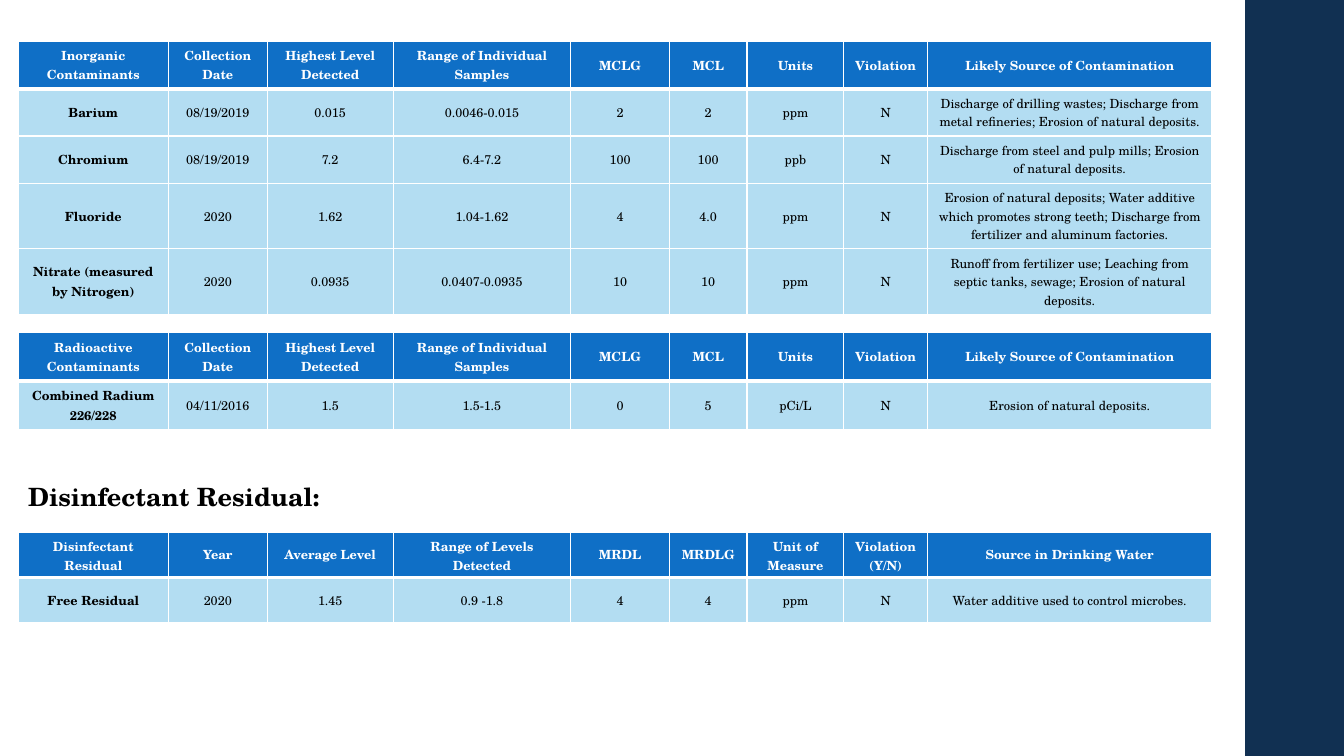
from dataclasses import dataclass

from lxml.etree import SubElement
from pptx import Presentation
from pptx.dml.color import RGBColor
from pptx.enum.shapes import MSO_SHAPE
from pptx.enum.text import MSO_ANCHOR, MSO_AUTO_SIZE, PP_ALIGN
from pptx.oxml.ns import qn
from pptx.util import Inches, Pt


@dataclass(frozen=True)
class Theme:
    font: str = "TeX Gyre Schola"
    side_bar: str = "113052"
    header_fill: str = "0F6FC6"
    body_fill: str = "B3DDF2"
    light: str = "FFFFFF"
    dark: str = "000000"
    table_size: int = 9
    heading_size: int = 18
    thin: int = 1
    thick: int = 3


THEME = Theme()
HEADING = "Disinfectant Residual:"
CONTAMINANT_COLUMNS = (
    "Collection Date", "Highest Level Detected", "Range of Individual Samples",
    "MCLG", "MCL", "Units", "Violation", "Likely Source of Contamination",
)
INORGANIC = [
    ("Inorganic Contaminants", *CONTAMINANT_COLUMNS),
    ("Barium", "08/19/2019", "0.015", "0.0046-0.015", "2", "2", "ppm", "N",
     "Discharge of drilling wastes; Discharge from metal refineries; Erosion of natural deposits."),
    ("Chromium", "08/19/2019", "7.2", "6.4-7.2", "100", "100", "ppb", "N",
     "Discharge from steel and pulp mills; Erosion of natural deposits."),
    ("Fluoride", "2020", "1.62", "1.04-1.62", "4", "4.0", "ppm", "N",
     "Erosion of natural deposits; Water additive which promotes strong teeth; "
     "Discharge from fertilizer and aluminum factories."),
    ("Nitrate (measured by Nitrogen)", "2020", "0.0935", "0.0407-0.0935", "10", "10", "ppm", "N",
     "Runoff from fertilizer use; Leaching from septic tanks, sewage; Erosion of natural deposits."),
]
RADIOACTIVE = [
    ("Radioactive Contaminants", *CONTAMINANT_COLUMNS),
    ("Combined Radium 226/228", "04/11/2016", "1.5", "1.5-1.5", "0", "5", "pCi/L", "N",
     "Erosion of natural deposits."),
]
DISINFECTANT = [
    ("Disinfectant Residual", "Year", "Average Level", "Range of Levels Detected",
     "MRDL", "MRDLG", "Unit of Measure", "Violation (Y/N)", "Source in Drinking Water"),
    ("Free Residual", "2020", "1.45", "0.9 -1.8", "4", "4", "ppm", "N",
     "Water additive used to control microbes."),
]
TABLES = [
    {"rows": INORGANIC, "top": 0.41, "heights": (0.47, 0.47, 0.47, 0.65, 0.65)},
    {"rows": RADIOACTIVE, "top": 3.3, "heights": (0.48, 0.48)},
    {"rows": DISINFECTANT, "top": 5.28, "heights": (0.45, 0.45)},
]
COLUMN_WIDTHS = (1.49, 0.98, 1.25, 1.76, 0.98, 0.77, 0.96, 0.83, 2.82)
CELL_PADDING = 0.04
LEFT = 0.18


def set_attributes(target, values):
    for name, value in values.items():
        setattr(target, name, value)


def style_text(paragraph, text, size, color, bold):
    run = paragraph.add_run()
    run.text = text
    set_attributes(run.font, {"name": THEME.font, "size": Pt(size), "bold": bold})
    run.font.color.rgb = RGBColor.from_string(color)


def set_borders(cell, top, bottom):
    properties = cell._tc.get_or_add_tcPr()
    widths = {"lnL": THEME.thin, "lnR": THEME.thin, "lnT": top, "lnB": bottom}
    for tag, width in widths.items():
        line = SubElement(properties, qn(f"a:{tag}"), w=str(Pt(width)))
        fill = SubElement(line, qn("a:solidFill"))
        SubElement(fill, qn("a:srgbClr"), val=THEME.light)


def add_data_table(slide, rows, top, heights):
    frame = slide.shapes.add_table(
        len(rows), len(COLUMN_WIDTHS), Inches(LEFT), Inches(top),
        Inches(sum(COLUMN_WIDTHS)), Inches(sum(heights)))
    table = frame.table
    table.horz_banding = False
    for column, width in zip(table.columns, COLUMN_WIDTHS):
        column.width = Inches(width)
    for row_index, (row, height) in enumerate(zip(rows, heights)):
        header = row_index == 0
        table.rows[row_index].height = Inches(height)
        for column_index, text in enumerate(row):
            cell = table.cell(row_index, column_index)
            set_borders(cell,
                        top=THEME.thick if row_index == 1 else THEME.thin,
                        bottom=THEME.thick if header else THEME.thin)
            set_attributes(cell, {
                "vertical_anchor": MSO_ANCHOR.MIDDLE,
                "margin_top": Inches(CELL_PADDING),
                "margin_bottom": Inches(CELL_PADDING),
            })
            cell.fill.solid()
            cell.fill.fore_color.rgb = RGBColor.from_string(
                THEME.header_fill if header else THEME.body_fill)
            paragraph = cell.text_frame.paragraphs[0]
            paragraph.alignment = PP_ALIGN.CENTER
            style_text(paragraph, text, THEME.table_size,
                       THEME.light if header else THEME.dark,
                       header or column_index == 0)


def add_side_bar(slide):
    shape = slide.shapes.add_shape(
        MSO_SHAPE.RECTANGLE, Inches(12.35), Inches(0), Inches(0.98), Inches(7.5))
    shape.shadow.inherit = False
    shape.fill.solid()
    shape.fill.fore_color.rgb = RGBColor.from_string(THEME.side_bar)
    shape.line.fill.background()


def add_heading(slide):
    shape = slide.shapes.add_textbox(Inches(LEFT), Inches(4.73), Inches(11.91), Inches(0.4))
    set_attributes(shape.text_frame, {
        "word_wrap": True, "auto_size": MSO_AUTO_SIZE.SHAPE_TO_FIT_TEXT})
    style_text(shape.text_frame.paragraphs[0], HEADING, THEME.heading_size, THEME.dark, True)


def main():
    presentation = Presentation()
    set_attributes(presentation, {"slide_width": Inches(13.33), "slide_height": Inches(7.5)})
    slide = presentation.slides.add_slide(presentation.slide_layouts[6])
    add_side_bar(slide)
    add_heading(slide)
    for table in TABLES:
        add_data_table(slide, **table)
    presentation.save("out.pptx")


if __name__ == "__main__":
    main()
